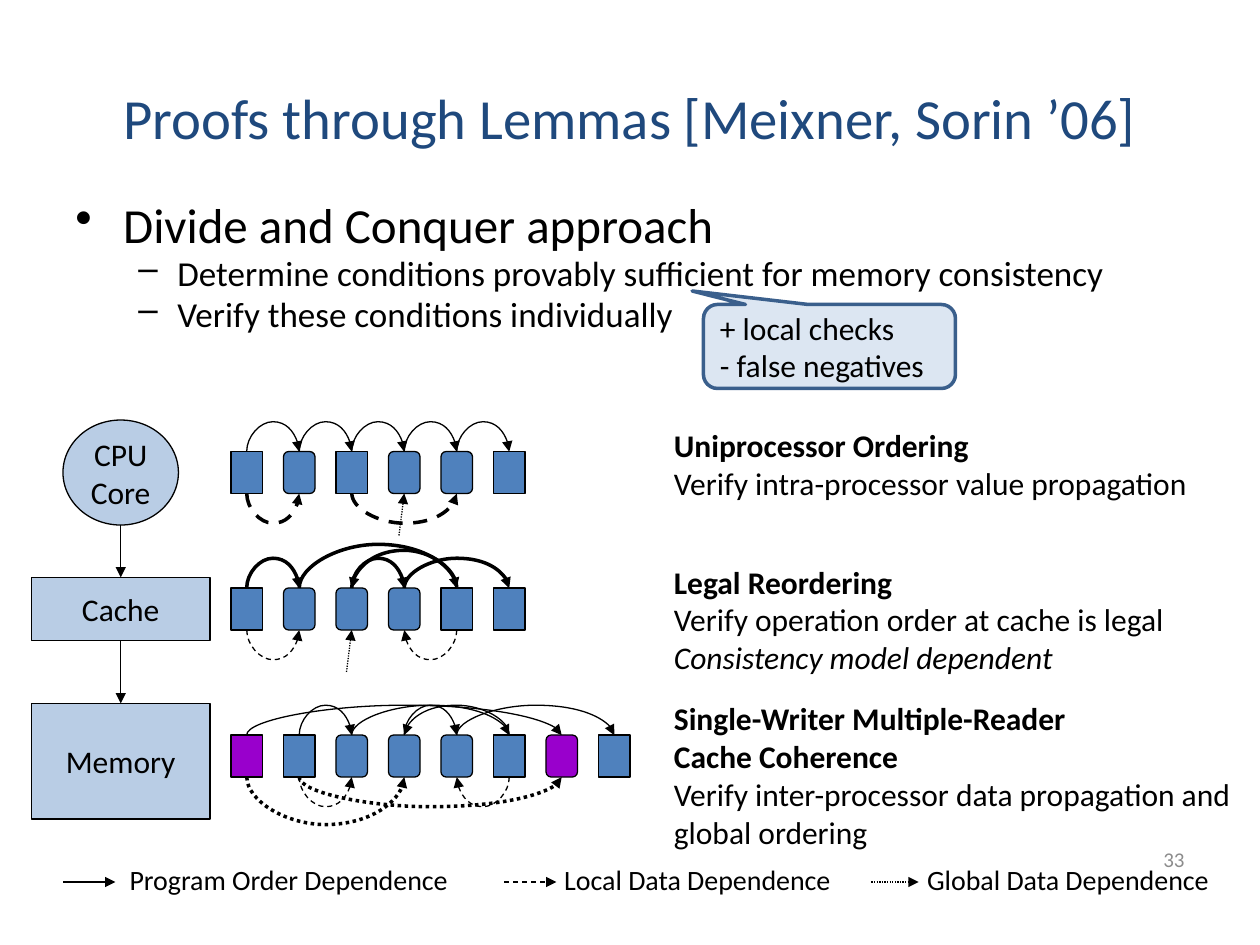
from dataclasses import dataclass

import pptx
import pptx.dml.color
import pptx.enum.dml
import pptx.enum.shapes
import pptx.enum.text
import pptx.oxml
import pptx.oxml.ns
import pptx.util

RGB = pptx.dml.color.RGBColor
SHAPE = pptx.enum.shapes.MSO_SHAPE
CONNECTOR = pptx.enum.shapes.MSO_CONNECTOR
DASH = pptx.enum.dml.MSO_LINE
ALIGN = pptx.enum.text.PP_ALIGN
ANCHOR = pptx.enum.text.MSO_ANCHOR
qn = pptx.oxml.ns.qn

BLACK = RGB(0x00, 0x00, 0x00)
GREY = RGB(0x8C, 0x8C, 0x8C)
TITLE_BLUE = RGB(0x1F, 0x49, 0x7D)
LIGHT_BLUE = RGB(0xB9, 0xCD, 0xE5)
NODE_BLUE = RGB(0x4F, 0x81, 0xBD)
PURPLE = RGB(0x99, 0x00, 0xCC)
CALLOUT_FILL = RGB(0xDC, 0xE6, 0xF2)
CALLOUT_LINE = RGB(0x3A, 0x5F, 0x8C)

COLS, ROWS = 120, 90  # the slide's grid: twelve units to the inch
NODE_LEFT, NODE_PITCH, NODE_W, NODE_H = 22, 5, 3, 4
THIN, THICK = 0.75, 2
ARC_THICKNESS = 0.02


@dataclass
class Arc:
    start: int
    end: int
    above: bool = True
    bulge: float = 3
    width: float = THIN
    dash: int | None = None


@dataclass
class Chain:
    """A row of operations: s square, o rounded, capitals purple."""
    top: float
    nodes: str
    arcs: list[Arc]
    incoming: int | None = None


CHAINS = [
    Chain(43, "sosoos",
          [Arc(i, i + 1) for i in range(5)]
          + [Arc(a, b, False, width=THICK, dash=DASH.DASH) for a, b in ((0, 1), (2, 4))], 3),
    Chain(56, "sooo" "ss",
          [Arc(a, b, bulge=h, width=THICK)
           for a, b, h in ((0, 1, 3), (1, 4, 4.4), (4, 2, 3.8), (2, 3, 3), (3, 5, 3))]
          + [Arc(a, b, False, dash=DASH.DASH) for a, b in ((0, 1), (4, 3))], 2),
    Chain(70, "SsooosOs",
          [Arc(a, b) for a, b in ((1, 2), (2, 5), (5, 3), (3, 4), (4, 7), (0, 6))]
          + [Arc(a, b, False, dash=DASH.DASH) for a, b in ((1, 2), (5, 4))]
          + [Arc(a, b, False, h, THICK, DASH.ROUND_DOT) for a, b, h in ((0, 3, 4.8), (1, 6, 3))]),
]

LEMMAS = [  # top, height, bold lines, plain lines, italic lines
    (40, 8.4, ["Uniprocessor Ordering"], ["Verify intra-processor value propagation"], []),
    (53, 12, ["Legal Reordering"], ["Verify operation order at cache is legal"],
     ["Consistency model dependent"]),
    (66, 15.6, ["Single-Writer Multiple-Reader", "Cache Coherence"],
     ["Verify inter-processor data propagation and global ordering"], []),
]

LEGEND = [  # arrow start, arrow end, dash, tab stop in inches, label
    (6, 11, None, 0.93, "Program Order Dependence"),
    (48, 53, DASH.DASH, 4.38, "Local Data Dependence"),
    (83, 87.5, DASH.ROUND_DOT, 7.26, "Global Data Dependence"),
]

prs = pptx.Presentation()
prs.slide_width, prs.slide_height = pptx.util.Inches(10), pptx.util.Inches(7.5)
s = prs.slides.add_slide(prs.slide_layouts[5])


def box(left: float, top: float, width: float, height: float) -> list[int]:
    """Grid units to slide lengths."""
    w, h = prs.slide_width, prs.slide_height
    return [round(left / COLS * w), round(top / ROWS * h),
            round(width / COLS * w), round(height / ROWS * h)]


def write(tf, text: str, size: float = 18, color=BLACK, bold=False, italic=False,
          align=ALIGN.LEFT):
    """Fill the first paragraph if it is empty, otherwise append one."""
    p = tf.paragraphs[0]
    if p.runs:
        p = tf.add_paragraph()
    p.alignment = align
    r = p.add_run()
    r.text = text
    r.font.name, r.font.size = "Calibri", pptx.util.Pt(size)
    r.font.bold, r.font.italic = bold, italic
    r.font.color.rgb = color
    return p


def add_text_box(*place: float):
    tf = s.shapes.add_textbox(*box(*place)).text_frame
    tf.word_wrap = True
    return tf


def add_block(kind, place, fill, lines=(), line=BLACK, width=THIN, align=ALIGN.CENTER):
    sp = s.shapes.add_shape(kind, *box(*place))
    sp.shadow.inherit = False
    sp.fill.solid()
    sp.fill.fore_color.rgb = fill
    sp.line.color.rgb = line
    sp.line.width = pptx.util.Pt(width)
    sp.text_frame.vertical_anchor = ANCHOR.MIDDLE
    for text in lines:
        write(sp.text_frame, text, align=align)
    return sp


def add_arrow(x1, y1, x2, y2, width=THIN, dash=None, kind=CONNECTOR.STRAIGHT):
    c = s.shapes.add_connector(kind, *box(x1, y1, x2, y2))
    c.line.color.rgb = BLACK
    c.line.width = pptx.util.Pt(width)
    if dash is not None:
        c.line.dash_style = dash
    ln = c.line._get_or_add_ln()
    ln.append(ln.makeelement(qn("a:tailEnd"), {"type": "triangle"}))
    spPr = c._element.spPr
    spPr.append(spPr.makeelement(qn("a:effectLst"), {}))
    return c


def add_arc(x1: float, x2: float, y: float, arc: Arc) -> None:
    """A U-shaped curve: a flat curved connector on its side, bulging past its ends."""
    c = add_arrow(x1, y, x2, y, arc.width, arc.dash, CONNECTOR.CURVE)
    span, t = abs(x2 - x1), ARC_THICKNESS
    c.left, c.top, c.width, c.height = box((x1 + x2 - t) / 2, y - (span - t) / 2, t, span)
    xfrm = c._element.spPr.find(qn("a:xfrm"))
    turned = arc.above != (x2 > x1)
    xfrm.set("rot", str((270 if turned else 90) * 60000))
    xfrm.set("flipH", str(int(turned)))
    xfrm.set("flipV", str(int(arc.above)))
    geom = c._element.spPr.find(qn("a:prstGeom"))
    guides = geom.find(qn("a:avLst"))
    adj = round((-arc.bulge if arc.above else arc.bulge) / t * 100000)
    guides.append(guides.makeelement(qn("a:gd"), {"name": "adj1", "fmla": f"val {adj}"}))


def add_chain(chain: Chain) -> None:
    nodes = [add_block(SHAPE.RECTANGLE if n in "sS" else SHAPE.ROUNDED_RECTANGLE,
                       (NODE_LEFT + i * NODE_PITCH, chain.top, NODE_W, NODE_H),
                       PURPLE if n.isupper() else NODE_BLUE)
             for i, n in enumerate(chain.nodes)]
    centres = [NODE_LEFT + NODE_W / 2 + i * NODE_PITCH for i in range(len(nodes))]
    bottom = chain.top + NODE_H
    for arc in chain.arcs:
        add_arc(centres[arc.start], centres[arc.end], chain.top if arc.above else bottom, arc)
    if chain.incoming is not None:
        x = centres[chain.incoming]
        add_arrow(x - 0.5, bottom + 4, x, bottom, dash=DASH.ROUND_DOT).end_connect(
            nodes[chain.incoming], 2)


def add_bullet(tf, text: str, size: float, mark: str, left: float, hang: float) -> None:
    p = write(tf, text, size)
    p.line_spacing, p.space_before = 0.8, pptx.util.Pt(size * 0.2)
    pPr = p._p.get_or_add_pPr()
    pPr.set("marL", str(pptx.util.Inches(left)))
    pPr.set("indent", str(-pptx.util.Inches(hang)))
    pPr.append(pPr.makeelement(qn("a:buChar"), {"char": mark}))


title = s.shapes.title
title.left, title.top, title.width, title.height = box(6, 3.6, 108, 15)
title.text_frame.vertical_anchor = ANCHOR.MIDDLE
write(title.text_frame, "Proofs through Lemmas [Meixner, Sorin ’06]", 32.4, TITLE_BLUE,
      align=ALIGN.CENTER)

body = add_text_box(6, 19, 109, 15)
add_bullet(body, "Divide and Conquer approach", 28, "•", 0.38, 0.38)
for text in ("Determine conditions provably sufficient for memory consistency",
             "Verify these conditions individually"):
    add_bullet(body, text, 20, "–", 0.81, 0.31)

cpu = add_block(SHAPE.OVAL, (6, 40, 11, 10), LIGHT_BLUE, ["CPU", "Core"])
cache = add_block(SHAPE.RECTANGLE, (3, 55, 17, 6), LIGHT_BLUE, ["Cache"])
memory = add_block(SHAPE.RECTANGLE, (3, 67, 17, 11), LIGHT_BLUE, ["Memory"])
for sp in (cpu, cache, memory):
    sp.text_frame.word_wrap = False
add_arrow(11.5, 50, 11.5, 55).end_connect(cache, 0)
link = add_arrow(11.5, 61, 11.5, 67)
link.begin_connect(cache, 2)
link.end_connect(memory, 0)

for chain in CHAINS:
    add_chain(chain)

for top, height, bold, plain, italic in LEMMAS:
    tf = add_text_box(63, top, 57, height)
    for text in bold + plain + italic:
        write(tf, text, bold=text in bold, italic=text in italic)

p = write(add_text_box(0, 81.6, 120, 4.4), "".join("\t" + row[-1] for row in LEGEND), 16)
pPr = p._p.get_or_add_pPr()
tabs = pPr.makeelement(qn("a:tabLst"), {})
pPr.append(tabs)
for start, end, dash, stop, _ in LEGEND:
    add_arrow(start, 84, end, 84, dash=dash)
    tabs.append(tabs.makeelement(qn("a:tab"), {"pos": str(pptx.util.Inches(stop)), "algn": "l"}))

number = add_text_box(86, 79.4, 28, 4.8)
number.vertical_anchor = ANCHOR.MIDDLE
write(number, "33", 12, GREY, align=ALIGN.RIGHT)

callout = add_block(SHAPE.ROUNDED_RECTANGULAR_CALLOUT, (67, 29, 24, 8), CALLOUT_FILL,
                    ["+ local checks", "- false negatives"], CALLOUT_LINE, THICK, ALIGN.LEFT)
for i, value in enumerate((-0.545, -0.661, 0.167)):
    callout.adjustments[i] = value

prs.save("out.pptx")
